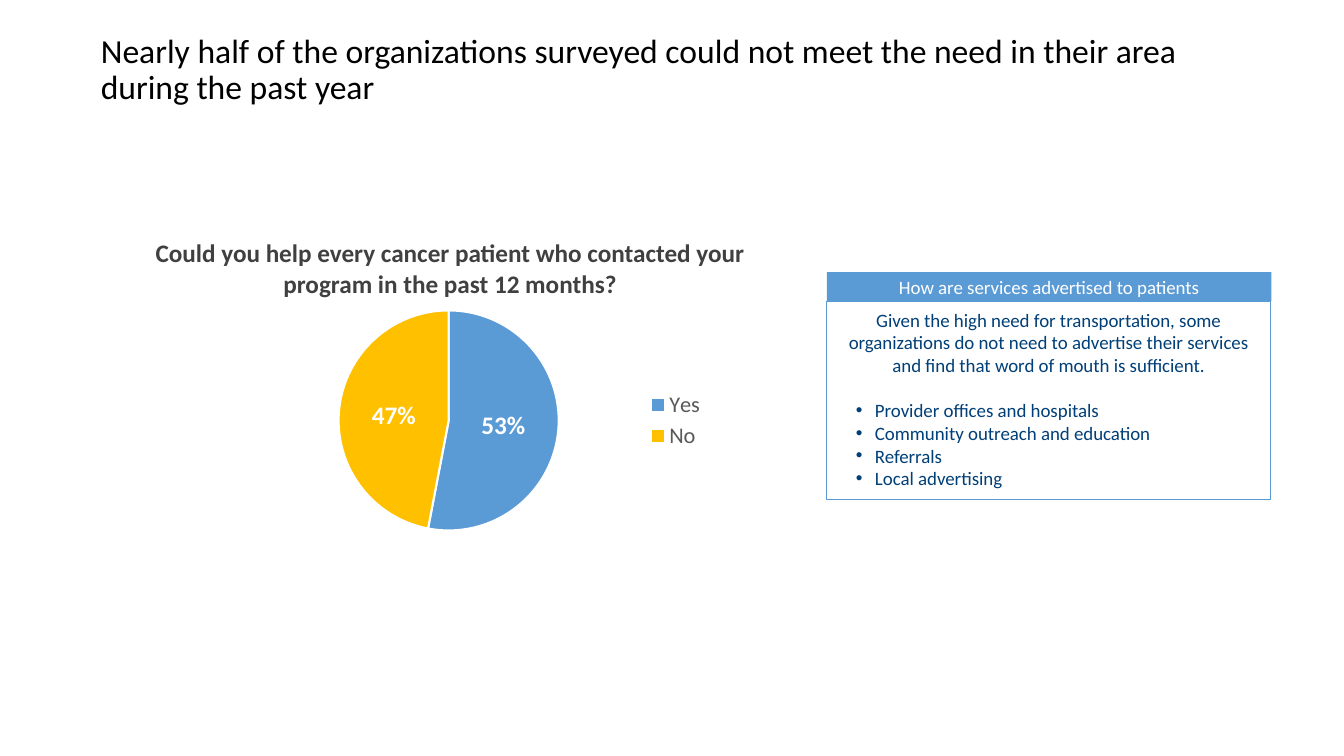
from lxml import etree
from pptx import Presentation
from pptx.chart.data import CategoryChartData
from pptx.dml.color import RGBColor
from pptx.enum.chart import XL_CHART_TYPE, XL_LABEL_POSITION, XL_LEGEND_POSITION
from pptx.enum.shapes import MSO_SHAPE
from pptx.enum.text import MSO_ANCHOR, PP_ALIGN
from pptx.oxml import parse_xml
from pptx.oxml.ns import nsdecls, qn
from pptx.util import Pt

PX = 9144  # 100 px to the inch
FONT = "Calibri"
BLACK = RGBColor(0x00, 0x00, 0x00)
WHITE = RGBColor(0xFF, 0xFF, 0xFF)
DARK = RGBColor(0x40, 0x40, 0x40)
GREY = RGBColor(0x59, 0x59, 0x59)
NAVY = RGBColor(0x00, 0x3F, 0x77)
BLUE = RGBColor(0x5B, 0x9B, 0xD5)
GOLD = RGBColor(0xFF, 0xC0, 0x00)
CENTER, LEFT = PP_ALIGN.CENTER, PP_ALIGN.LEFT
TOP, MIDDLE = MSO_ANCHOR.TOP, MSO_ANCHOR.MIDDLE
RECT = MSO_SHAPE.RECTANGLE

TITLE = ("Nearly half of the organizations surveyed could not meet "
         "the need in their area during the past year")
ASK = ("Could you help every cancer patient who contacted your program "
       "in the past 12 months?")
REPLIES = [("Yes", 0.53, BLUE), ("No", 0.47, GOLD)]
HEAD = "How are services advertised to patients"
INTRO = ("Given the high need for transportation, some organizations do not "
         "need to advertise their services and find that word of mouth is "
         "sufficient.")
WAYS = ["Provider offices and hospitals", "Community outreach and education",
        "Referrals", "Local advertising"]

TITLE_BOX = (90, 40, 1150, 60)
ASK_BOX = (103, 231, 687, 71)
PIE_BOX = (230, 296, 500, 240)
HEAD_BOX = (820, 270, 441, 29)
BODY_BOX = (820, 299, 440, 197)
PIE_PART = (0.21, 0.05, 0.44, 0.91)
KEY_PART = (0.81, 0.37, 0.14, 0.27)


def emu(box):
    return [v * PX for v in box]


def style(font, size, color, bold=False):
    font.name, font.size, font.bold = FONT, Pt(size), bold
    font.color.rgb = color


def write(para, text, size, color, align=LEFT, bold=False):
    para.text = text
    para.alignment = align
    style(para.runs[0].font, size, color, bold)


def panel(slide, box, fill, anchor):
    shape = slide.shapes.add_shape(RECT, *emu(box))
    shape.shadow.inherit = False
    if fill:
        shape.fill.solid()
        shape.fill.fore_color.rgb = fill
        shape.line.fill.background()
    else:
        shape.fill.background()
        shape.line.color.rgb = BLUE
        shape.line.width = Pt(0.75)
    frame = shape.text_frame
    frame.word_wrap = True
    frame.vertical_anchor = anchor
    return frame


def bullet(para):
    props = para._p.get_or_add_pPr()
    props.set("marL", str(38 * PX))
    props.set("indent", str(-19 * PX))
    etree.SubElement(props, qn("a:buFont")).set("typeface", "Arial")
    etree.SubElement(props, qn("a:buChar")).set("char", "•")


def layout(part, inner=False):
    """Chart layout from left, top, width and height as shares of the chart."""
    target = '<c:layoutTarget val="inner"/>' if inner else ""
    modes = "".join(f'<c:{a}Mode val="edge"/>' for a in "xy")
    sizes = "".join(f'<c:{a} val="{v}"/>' for a, v in zip("xywh", part))
    return parse_xml(f'<c:layout {nsdecls("c")}><c:manualLayout>{target}{modes}'
                     f'{sizes}</c:manualLayout></c:layout>')


def place(element, new, index):
    for old in element.findall(qn("c:layout")):
        element.remove(old)
    element.insert(index, new)


def add_pie(slide):
    data = CategoryChartData(number_format="0%")
    data.categories = [name for name, _, _ in REPLIES]
    data.add_series("Series 1", [share for _, share, _ in REPLIES])
    chart = slide.shapes.add_chart(XL_CHART_TYPE.PIE, *emu(PIE_BOX), data).chart
    style(chart.font, 14, BLACK)
    chart.has_title = False
    chart.has_legend = True
    key = chart.legend
    key.position = XL_LEGEND_POSITION.RIGHT
    key.include_in_layout = False
    style(key.font, 16, GREY)
    place(key._element, layout(KEY_PART), 1)
    place(chart._chartSpace.chart.plotArea, layout(PIE_PART, True), 0)

    plot = chart.plots[0]
    plot.vary_by_categories = True
    series = plot.series[0]
    for i, (_, _, color) in enumerate(REPLIES):
        form = series.points[i].format
        form.fill.solid()
        form.fill.fore_color.rgb = color
        form.line.color.rgb = WHITE
        form.line.width = Pt(1.5)
    labels = series.data_labels
    labels.show_value = True
    labels.show_percentage = False
    labels.number_format = "###0%"
    labels.number_format_is_linked = False
    labels.position = XL_LABEL_POSITION.CENTER
    style(labels.font, 18, WHITE, True)


def main():
    deck = Presentation()
    deck.slide_width, deck.slide_height = 1333 * PX, 750 * PX
    slide = deck.slides.add_slide(deck.slide_layouts[5])

    title = slide.shapes.title
    title.left, title.top, title.width, title.height = emu(TITLE_BOX)
    title.text_frame.vertical_anchor = MIDDLE
    para = title.text_frame.paragraphs[0]
    write(para, TITLE, 24, BLACK)
    para.line_spacing = 0.9

    add_pie(slide)

    ask = slide.shapes.add_textbox(*emu(ASK_BOX)).text_frame
    ask.word_wrap = True
    write(ask.paragraphs[0], ASK, 18, DARK, CENTER, True)

    body = panel(slide, BODY_BOX, None, TOP)
    body.margin_top = body.margin_bottom = 7 * PX
    write(body.paragraphs[0], INTRO, 13.5, NAVY, CENTER)
    for i, way in enumerate(WAYS):
        para = body.add_paragraph()
        if i == 0:
            para.space_before = Pt(16)
        bullet(para)
        write(para, way, 13.5, NAVY)

    head = panel(slide, HEAD_BOX, BLUE, MIDDLE)
    write(head.paragraphs[0], HEAD, 13.5, WHITE, CENTER)
    deck.save("out.pptx")


if __name__ == "__main__":
    main()
